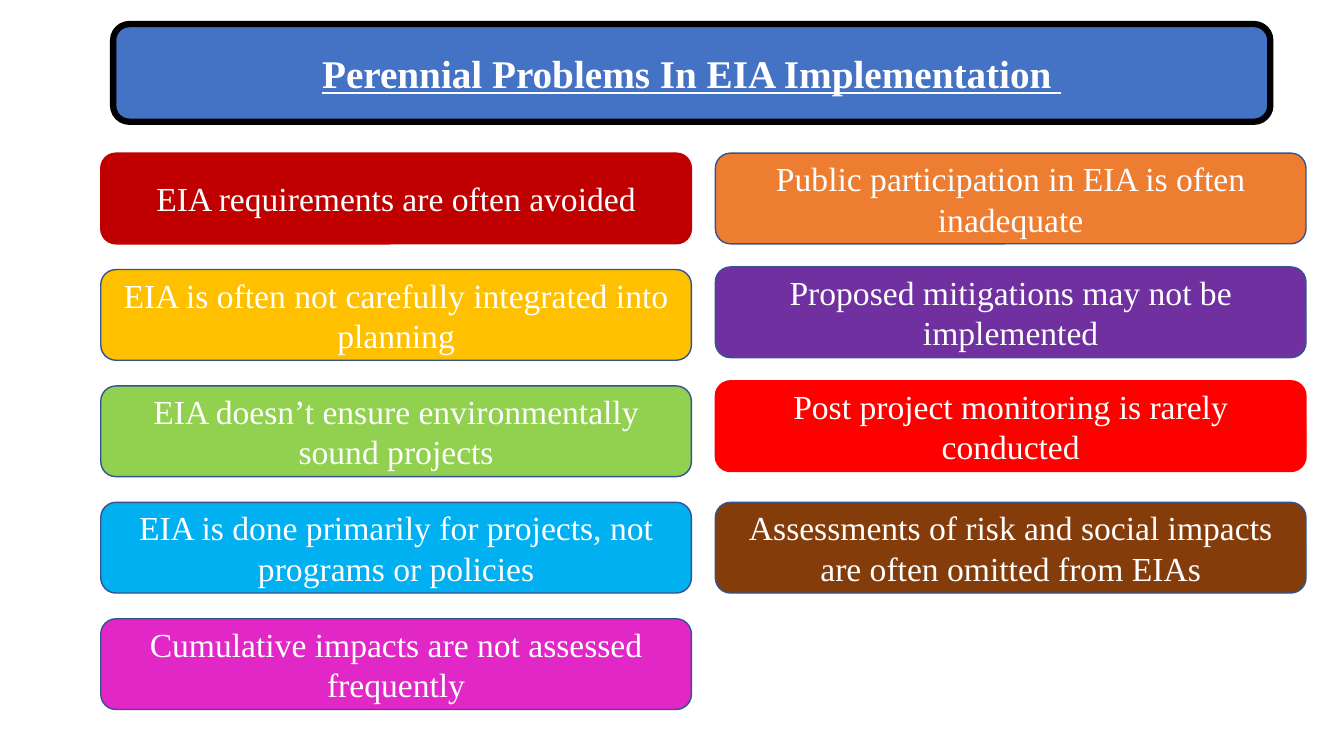
from pptx import Presentation
from pptx.dml.color import RGBColor
from pptx.enum.shapes import MSO_SHAPE
from pptx.enum.text import MSO_ANCHOR, PP_ALIGN
from pptx.util import Pt

FONT = "Times New Roman"
NAVY = "325491"
CARD_WIDTH, CARD_HEIGHT = 421.9, 64.8
FIRST_TOP = 109.4
ROW_PITCH = 83.15


def color(hex_string):
    return RGBColor.from_string(hex_string)


def add_card(left, top, width, height, text, fill, outline, outline_width, size):
    card = slide.shapes.add_shape(
        MSO_SHAPE.ROUNDED_RECTANGLE, Pt(left), Pt(top), Pt(width), Pt(height))
    card.shadow.inherit = False
    card.fill.solid()
    card.fill.fore_color.rgb = color(fill)
    card.line.color.rgb = color(outline)
    card.line.width = Pt(outline_width)
    frame = card.text_frame
    frame.word_wrap = True
    frame.vertical_anchor = MSO_ANCHOR.MIDDLE
    frame.text = text
    paragraph = frame.paragraphs[0]
    paragraph.alignment = PP_ALIGN.CENTER
    font = paragraph.runs[0].font
    font.name = FONT
    font.size = Pt(size)
    font.color.rgb = color("FFFFFF")
    return font


prs = Presentation()
prs.slide_width, prs.slide_height = Pt(960), Pt(540)
slide = prs.slides.add_slide(prs.slide_layouts[6])

# Title banner
title_font = add_card(80.8, 17.2, 826.6, 69.8, "Perennial Problems In EIA Implementation ",
                      "4472C4", "000000", 4.5, 28)
title_font.bold = True
title_font.underline = True

# Problems: text, fill, outline
left_problems = [
    ("EIA requirements are often avoided", "C00000", "C00000"),
    ("EIA is often not carefully integrated into planning", "FFC000", NAVY),
    ("EIA doesn’t ensure environmentally sound projects", "92D050", NAVY),
    ("EIA is done primarily for projects, not programs or policies", "00B0F0", NAVY),
    ("Cumulative impacts are not assessed frequently", "E127C6", NAVY),
]
right_problems = [
    ("Public participation in EIA is often inadequate", "ED7D31", NAVY),
    ("Proposed mitigations may not be implemented", "7030A0", NAVY),
    ("Post project monitoring is rarely conducted", "FF0000", "FF0000"),
    ("Assessments of risk and social impacts are often omitted from EIAs", "843C0B", NAVY),
]

# The right column is a little tighter, but its last card lines up with the left one
left_tops = [FIRST_TOP + ROW_PITCH * row for row in range(5)]
right_tops = [FIRST_TOP + 81.3 * row for row in range(3)] + [left_tops[3]]

# Two columns of cards
for column_left, tops, problems in (
    (72, left_tops, left_problems),
    (511, right_tops, right_problems),
):
    for top, (problem, fill, outline) in zip(tops, problems):
        add_card(column_left, top, CARD_WIDTH, CARD_HEIGHT, problem, fill, outline, 1, 24)

prs.save("out.pptx")
